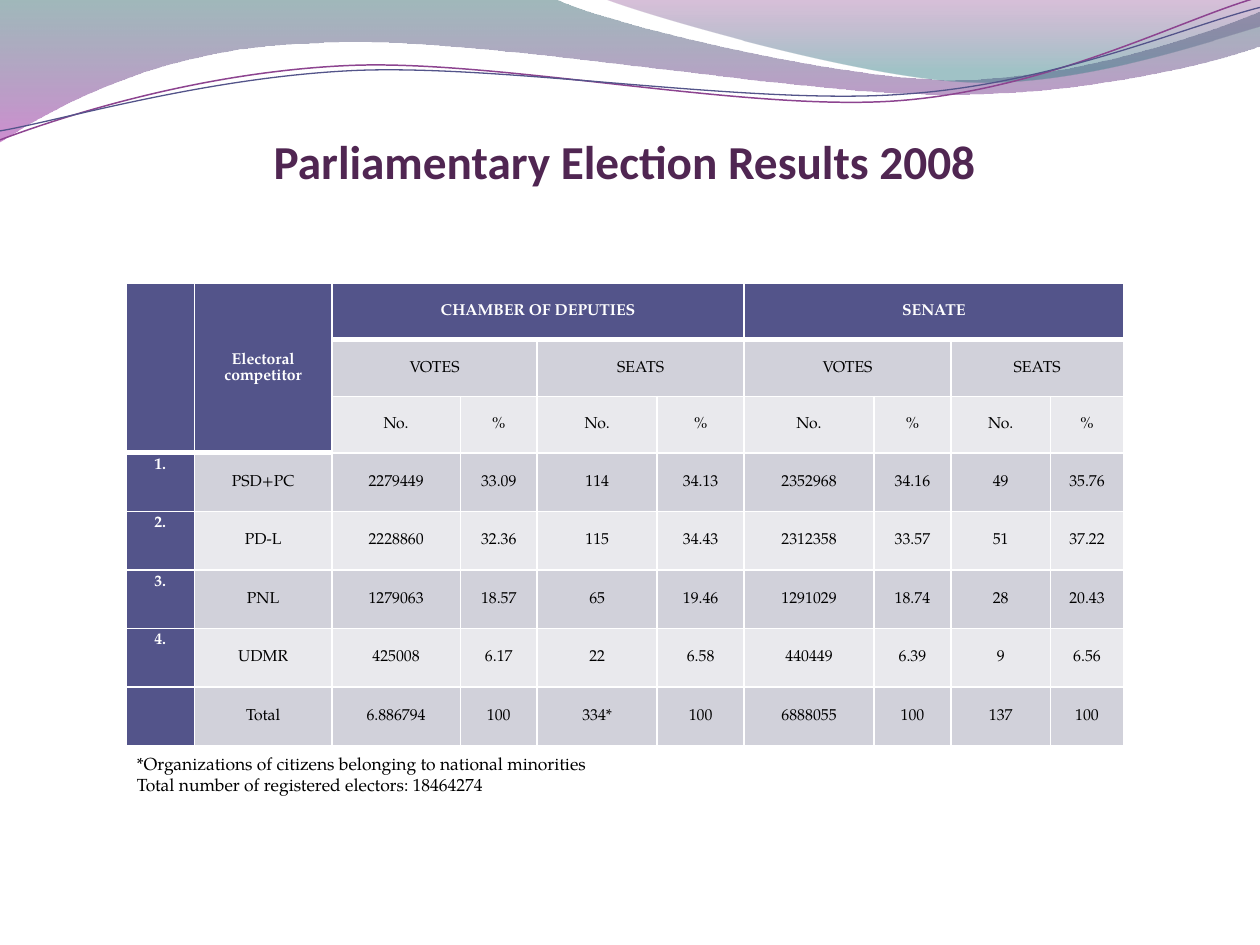
import math

import lxml.etree
import pptx
import pptx.dml.color
import pptx.enum.text
import pptx.oxml
import pptx.oxml.ns
import pptx.util

Cm, Pt, qn = pptx.util.Cm, pptx.util.Pt, pptx.oxml.ns.qn
ALIGN, ANCHOR = pptx.enum.text.PP_ALIGN, pptx.enum.text.MSO_ANCHOR

THEME = {
    "title": {"name": "Calibri", "size": Pt(27), "bold": True, "color": "502652"},
    "head": {"name": "TeX Gyre Pagella", "size": Pt(9), "bold": True, "color": "FFFFFF"},
    "cell": {"name": "TeX Gyre Pagella", "size": Pt(9), "bold": False, "color": "000000"},
    "note": {"name": "TeX Gyre Pagella", "size": Pt(10), "bold": False, "color": "000000"},
    "head_fill": "53548A",
    "bands": ("E9E9ED", "D1D1DA"),
    "border": "FFFFFF",
}

FILLED_WAVES = [
    ([(0, 0), (11.18, -0.03), (12.09, 0.43, 16.87, 1.6, 19.25, 1.6),
      (21.67, 1.6, 24.33, 0.66, 25.4, 0.23), (25.43, 0.91),
      (24.97, 1.12, 22.1, 1.93, 18.95, 1.9), (15.8, 1.9, 9.7, 0.71, 6.53, 0.86),
      (3.28, 0.91, 1.17, 2.11, -0.03, 2.87), (0, 0)],
     [(0, "2D6368", 45), (1, "A530A9", 55)]),
    ([(12.17, -0.03), (12.93, 0.28, 17.32, 1.57, 19.53, 1.65),
      (21.74, 1.75, 24.41, 0.81, 25.4, 0.53), (25.4, 0), (12.17, -0.03)],
     [(0, "7F2F82", 30), (0.8, "2F7B82", 45)]),
]
LINE_WAVES = [
    ([(0, 2.82), (1.22, 2.36, 4.01, 1.45, 7.04, 1.32),
      (10.03, 1.19, 15.06, 2.26, 18.11, 2.03), (21.16, 1.8, 23.83, 0.38, 25.35, -0.05)],
     (12.67, 1.46), "8D4490", 0.85),
    ([(0, 2.64), (1.19, 2.44, 4.17, 1.55, 7.19, 1.42),
      (10.24, 1.3, 15.16, 2.13, 18.21, 1.9), (21.23, 1.7, 23.9, 0.53, 25.4, 0.15)],
     (12.69, 1.5), "53548A", 0.75),
]
TILT = 2.7

COLS = [1.38, 2.77, 2.59, 1.55, 2.42, 1.75, 2.62, 1.55, 2.01, 1.47]
ROWS = [1.14] * 3 + [1.18] * 5
SPANS = [(0, 0, 2, 0), (0, 1, 2, 1), (0, 2, 0, 5), (0, 6, 0, 9)]
SPANS += [(1, c, 1, c + 1) for c in range(2, 10, 2)]
RESULTS = [
    ["", "Electoral competitor", "CHAMBER OF DEPUTIES", "", "", "", "SENATE", "", "", ""],
    ["", ""] + ["VOTES", "", "SEATS", ""] * 2,
    ["", ""] + ["No.", "%"] * 4,
    ["1.", "PSD+PC", "2279449", "33.09", "114", "34.13", "2352968", "34.16", "49", "35.76"],
    ["2.", "PD-L", "2228860", "32.36", "115", "34.43", "2312358", "33.57", "51", "37.22"],
    ["3.", "PNL", "1279063", "18.57", "65", "19.46", "1291029", "18.74", "28", "20.43"],
    ["4.", "UDMR", "425008", "6.17", "22", "6.58", "440449", "6.39", "9", "6.56"],
    ["", "Total", "6.886794", "100", "334*", "100", "6888055", "100", "137", "100"],
]
NOTES = ["*Organizations of citizens belonging to national minorities",
         "Total number of registered electors: 18464274"]


def rgb(value):
    return pptx.dml.color.RGBColor.from_string(value)


def assign(obj, values):
    for key, value in values.items():
        if key == "color":
            obj.color.rgb = rgb(value)
        else:
            setattr(obj, key, value)


def add_run(p, text, style):
    r = p.add_run()
    r.text = text
    assign(r.font, THEME[style])


def turn(point, center, degrees):
    sin, cos = math.sin(math.radians(degrees)), math.cos(math.radians(degrees))
    x, y = point[0] - center[0], point[1] - center[1]
    return center[0] + x * cos - y * sin, center[1] + x * sin + y * cos


def add_wave(s, box, segments, close, center=(0, 0), tilt=0):
    points = [turn(seg[i:i + 2], center, tilt) for seg in segments for i in range(0, len(seg), 2)]
    points = [(Cm(box[0] + x), Cm(box[1] + y)) for x, y in points]
    builder = s.shapes.build_freeform(*points[0])
    builder.add_line_segments(points[1:], close=close)
    sp = builder.convert_to_shape()
    sp.shadow.inherit = False
    sp.rotation = -tilt % 360
    steps = iter(list(sp._element.iter(qn("a:lnTo"))))
    for seg in segments[1:]:
        step = next(steps)
        if len(seg) == 6:
            curve = lxml.etree.Element(qn("a:cubicBezTo"))
            step.addprevious(curve)
            for part in (step, next(steps), next(steps)):
                curve.append(part[0])
                part.getparent().remove(part)
    return sp


def add_waves(s, box):
    for segments, stops in FILLED_WAVES:
        sp = add_wave(s, box, segments, True)
        sp.line.fill.background()
        sp.fill.gradient()
        sp.fill.gradient_angle = 270
        for stop, (position, color, opacity) in zip(sp.fill.gradient_stops, stops):
            assign(stop, {"position": position, "color": color})
            stop._gs.find(qn("a:srgbClr")).append(pptx.oxml.parse_xml(
                f'<a:alpha {pptx.oxml.ns.nsdecls("a")} val="{opacity * 1000}"/>'))
    for segments, center, color, width in LINE_WAVES:
        sp = add_wave(s, box, segments, False, center, TILT)
        sp.fill.background()
        assign(sp.line, {"width": Pt(width), "color": color})


def add_title(s, box, text):
    sp = s.shapes.title
    s.shapes._spTree.append(sp._element)
    assign(sp, dict(zip(("left", "top", "width", "height"), map(Cm, box))))
    tf = sp.text_frame
    assign(tf, {"margin_left": 0, "margin_right": 0, "margin_top": Cm(0.13),
                "margin_bottom": 0, "vertical_anchor": ANCHOR.BOTTOM, "word_wrap": True})
    p = tf.paragraphs[0]
    p.alignment = ALIGN.CENTER
    add_run(p, text, "title")


def add_borders(cell, bottom):
    for side, width in (("L", 1), ("R", 1), ("T", 1), ("B", bottom)):
        cell._tc.get_or_add_tcPr().append(pptx.oxml.parse_xml(
            f'<a:ln{side} {pptx.oxml.ns.nsdecls("a")} w="{Pt(width)}"><a:solidFill>'
            f'<a:srgbClr val="{THEME["border"]}"/></a:solidFill></a:ln{side}>'))


def format_cell(cell, row, col, text):
    head = row == 0 or col == 0 or (col == 1 and row < 3)
    numbered = col == 0 and row > 2
    add_borders(cell, 3 if row == 0 and cell.is_merge_origin else 1)
    cell.fill.solid()
    cell.fill.fore_color.rgb = rgb(THEME["head_fill"] if head else THEME["bands"][row % 2])
    margins = {f"margin_{side}": Cm(0.08) for side in ("left", "right", "top", "bottom")}
    assign(cell, {**margins, "vertical_anchor": ANCHOR.TOP if numbered else ANCHOR.MIDDLE})
    if text:
        p = cell.text_frame.paragraphs[0]
        assign(p, {"alignment": ALIGN.CENTER, "line_spacing": 1.07, "space_after": Pt(8)})
        add_run(p, text, "head" if head else "cell")


def add_results(s, box):
    table = s.shapes.add_table(len(ROWS), len(COLS), *map(Cm, box)).table
    for column, width in zip(table.columns, COLS):
        column.width = Cm(width)
    for row, height in zip(table.rows, ROWS):
        row.height = Cm(height)
    for r1, c1, r2, c2 in SPANS:
        table.cell(r1, c1).merge(table.cell(r2, c2))
    for row, texts in enumerate(RESULTS):
        for col, text in enumerate(texts):
            format_cell(table.cell(row, col), row, col, text)


def add_notes(s, box):
    tf = s.shapes.add_textbox(*map(Cm, box)).text_frame
    assign(tf, {"word_wrap": True,
                "auto_size": pptx.enum.text.MSO_AUTO_SIZE.SHAPE_TO_FIT_TEXT})
    for i, text in enumerate(NOTES):
        add_run(tf.add_paragraph() if i else tf.paragraphs[0], text, "note")


def main():
    prs = pptx.Presentation()
    assign(prs, {"slide_width": Cm(25.4), "slide_height": Cm(19.05)})
    s = prs.slides.add_slide(prs.slide_layouts[5])
    add_waves(s, (0, 0))
    add_title(s, (1.27, 2.11, 22.86, 1.7), "Parliamentary Election Results 2008 ")
    add_results(s, (2.54, 5.71, sum(COLS), sum(ROWS)))
    add_notes(s, (2.51, 15.05, 19.46, 1.12))
    prs.save("out.pptx")


if __name__ == "__main__":
    main()
